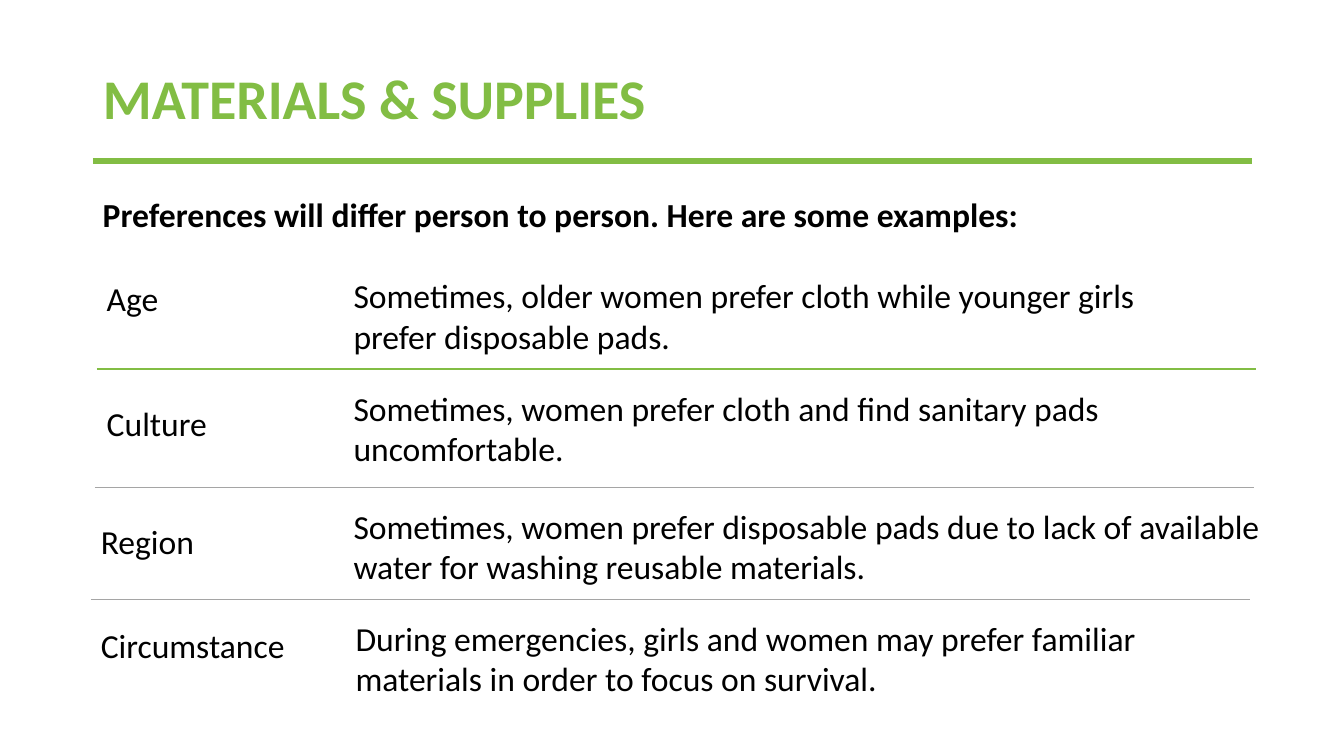
import dataclasses

import lxml.etree
import pptx
import pptx.dml.color
import pptx.enum.shapes
import pptx.enum.text
import pptx.oxml.ns
import pptx.shapes.autoshape
import pptx.slide
import pptx.util
from pptx.util import Cm

COLOURS = {"green": "82BD44", "grey": "A5A5A5", "black": "000000"}
FONT = "Calibri"
RULE_LENGTH = 29.21
LABEL_HEIGHT = 1.27
DETAIL_HEIGHT = 2.31


@dataclasses.dataclass
class Box:
    """A place on the slide, in centimetres."""
    left: float
    top: float
    width: float
    height: float


@dataclasses.dataclass
class Rule:
    left: float
    top: float
    colour: str
    weight: float


@dataclasses.dataclass
class Preference:
    label: str
    label_box: Box
    detail: str
    detail_box: Box
    label_wraps: bool = False


PREFERENCES = [
    Preference("Age", Box(2.44, 6.88, 4.34, LABEL_HEIGHT),
               "Sometimes, older women prefer cloth while younger girls prefer disposable pads.",
               Box(8.66, 6.81, 22.12, DETAIL_HEIGHT), label_wraps=True),
    Preference("Culture", Box(2.44, 10.03, 3.07, LABEL_HEIGHT),
               "Sometimes, women prefer cloth and find sanitary pads uncomfortable.",
               Box(8.66, 9.65, 22.83, DETAIL_HEIGHT)),
    Preference("Region", Box(2.29, 13, 2.9, LABEL_HEIGHT),
               "Sometimes, women prefer disposable pads due to lack of available "
               "water for washing reusable materials.",
               Box(8.66, 12.62, 23.47, DETAIL_HEIGHT)),
    Preference("Circumstance", Box(2.29, 15.62, 5.18, LABEL_HEIGHT),
               "During emergencies, girls and women may prefer familiar "
               "materials in order to focus on survival.",
               Box(8.71, 15.44, 22.83, DETAIL_HEIGHT)),
]

RULES = [
    Rule(2.34, 4.06, "green", 4.5),
    Rule(2.44, 9.3, "green", 1),
    Rule(2.39, 12.29, "grey", 0.5),
    Rule(2.29, 15.11, "grey", 0.5),
]


def write_text(frame: pptx.text.text.TextFrame, text: str, *, size: float = 24,
               colour: str = "black", bold: bool = False, wrap: bool = True) -> None:
    frame.word_wrap = wrap
    frame.text = text
    font = frame.paragraphs[0].runs[0].font
    font.name = FONT
    font.size = pptx.util.Pt(size)
    font.bold = bold
    font.color.rgb = pptx.dml.color.RGBColor.from_string(COLOURS[colour])


def add_text(slide: pptx.slide.Slide, text: str, box: Box, *, bold: bool = False,
             wrap: bool = True) -> None:
    holder = slide.shapes.add_textbox(Cm(box.left), Cm(box.top), Cm(box.width), Cm(box.height))
    write_text(holder.text_frame, text, bold=bold, wrap=wrap)
    holder.text_frame.auto_size = pptx.enum.text.MSO_AUTO_SIZE.SHAPE_TO_FIT_TEXT


def add_rule(slide: pptx.slide.Slide, rule: Rule) -> None:
    line = slide.shapes.add_connector(
        pptx.enum.shapes.MSO_CONNECTOR.STRAIGHT,
        Cm(rule.left), Cm(rule.top), Cm(rule.left + RULE_LENGTH), Cm(rule.top))
    line.line.color.rgb = pptx.dml.color.RGBColor.from_string(COLOURS[rule.colour])
    line.line.width = pptx.util.Pt(rule.weight)
    lxml.etree.SubElement(line._element.spPr, pptx.oxml.ns.qn("a:effectLst"))


def add_title(slide: pptx.slide.Slide, text: str, box: Box) -> None:
    title = slide.shapes.title
    title.left, title.top = Cm(box.left), Cm(box.top)
    title.width, title.height = Cm(box.width), Cm(box.height)
    write_text(title.text_frame, text, size=40, colour="green", bold=True)
    title.text_frame.vertical_anchor = pptx.enum.text.MSO_ANCHOR.MIDDLE
    heading = title.text_frame.paragraphs[0]
    heading.alignment = pptx.enum.text.PP_ALIGN.LEFT
    heading.line_spacing = 0.9


def main() -> None:
    deck = pptx.Presentation()
    deck.slide_width, deck.slide_height = Cm(33.87), Cm(19.05)
    slide = deck.slides.add_slide(deck.slide_layouts.get_by_name("Title Only"))

    # Heading and introduction
    add_title(slide, "MATERIALS & SUPPLIES", Box(2.34, 1.02, 14.66, 3.05))
    add_text(slide, "Preferences will differ person to person. Here are some examples:",
             Box(2.34, 4.75, 28.6, LABEL_HEIGHT), bold=True)

    # Examples of preferences
    for preference in PREFERENCES:
        add_text(slide, preference.label, preference.label_box, wrap=preference.label_wraps)
        add_text(slide, preference.detail, preference.detail_box)

    # Dividing rules
    for rule in RULES:
        add_rule(slide, rule)

    deck.save("out.pptx")


if __name__ == "__main__":
    main()
